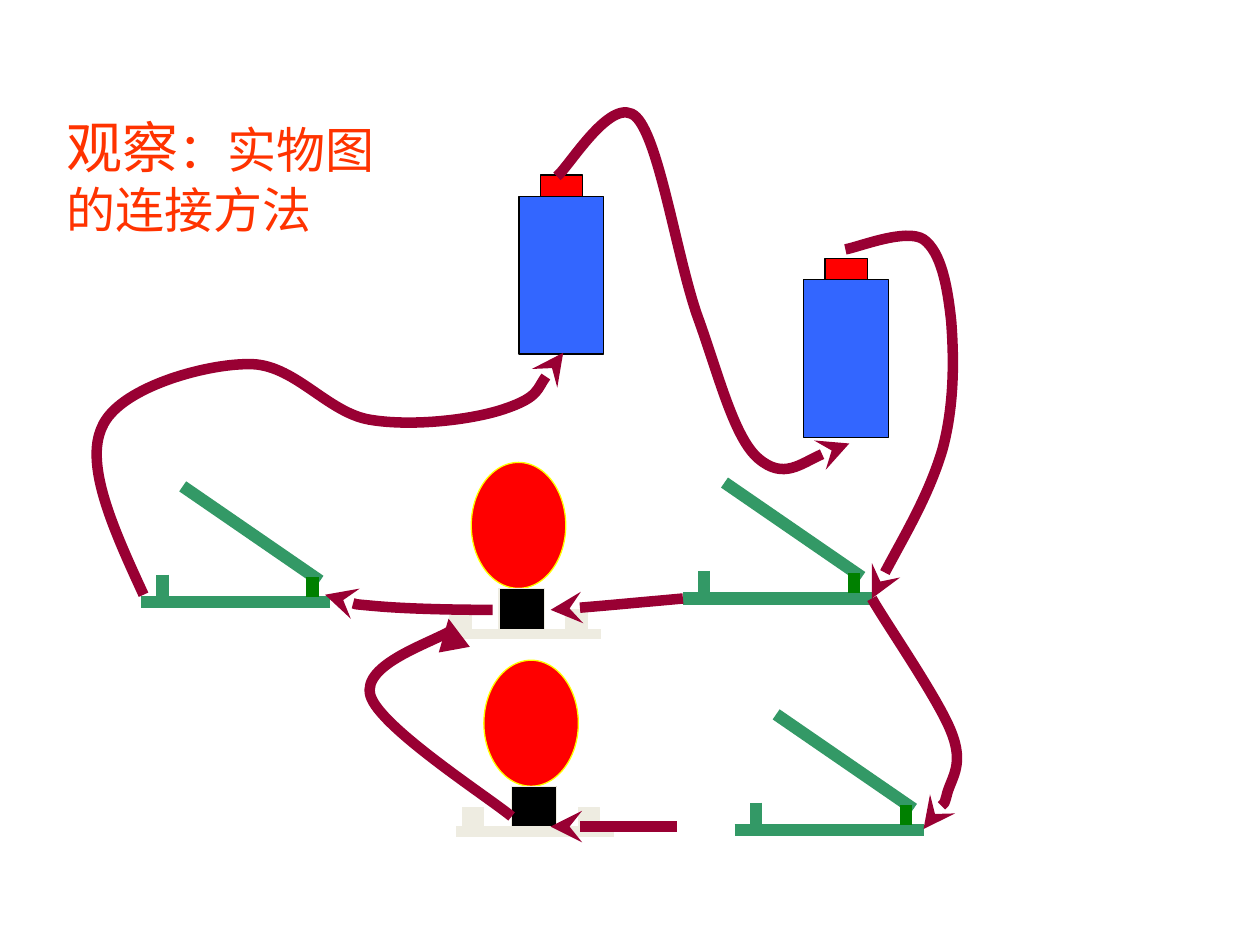
from collections import namedtuple
from dataclasses import dataclass

from lxml.etree import SubElement
from pptx import Presentation
from pptx.dml.color import RGBColor
from pptx.enum.shapes import MSO_CONNECTOR as Connector, MSO_SHAPE as Preset
from pptx.enum.text import MSO_ANCHOR as Anchor, MSO_AUTO_SIZE as AutoSize, PP_ALIGN as Align
from pptx.oxml.ns import qn
from pptx.util import Inches, Pt

Box = namedtuple("Box", "left top width height")


@dataclass(frozen=True)
class Theme:
    font: str = "Cabin"
    lead_size: float = 32
    title_size: float = 28
    title: str = "FF3300"
    battery: str = "3366FF"
    red: str = "FF0000"
    black: str = "000000"
    glow: str = "FFFF00"
    holder: str = "EEECE1"
    switch: str = "339966"
    hinge: str = "008000"
    wire: str = "990033"
    outline_width: float = 0.75
    wire_width: float = 6
    switch_width: float = 7


THEME = Theme()


def set_line(shape, color, width):
    shape.line.color.rgb = RGBColor.from_string(color)
    shape.line.width = Pt(width)


def add_arrowhead(shape, kind):
    SubElement(shape.line._get_or_add_ln(), qn("a:tailEnd"), type=kind)


def add_part(group, preset, box, part, fill, outline):
    left, top, width, height = part
    shape = group.shapes.add_shape(
        preset, Inches(box.left + left), Inches(box.top + top), Inches(width), Inches(height))
    shape.shadow.inherit = False
    shape.fill.solid()
    shape.fill.fore_color.rgb = RGBColor.from_string(fill)
    set_line(shape, outline, THEME.outline_width)


def add_bar(parent, box, start, end, color, width):
    bar = parent.shapes.add_connector(
        Connector.STRAIGHT,
        Inches(box.left + start[0]), Inches(box.top + start[1]),
        Inches(box.left + end[0]), Inches(box.top + end[1]))
    set_line(bar, color, width)
    SubElement(bar._element.spPr, qn("a:effectLst"))
    return bar


def add_title(slide, box):
    title = slide.shapes.title
    title.left, title.top, title.width, title.height = map(Inches, box)
    frame = title.text_frame
    frame.word_wrap = True
    frame.auto_size = AutoSize.SHAPE_TO_FIT_TEXT
    frame.vertical_anchor = Anchor.TOP
    paragraph = frame.paragraphs[0]
    paragraph.alignment = Align.LEFT
    for text, size in (("观察", THEME.lead_size), ("：实物图的连接方法", THEME.title_size)):
        run = paragraph.add_run()
        run.text = text
        run.font.name = THEME.font
        run.font.size = Pt(size)
        run.font.color.rgb = RGBColor.from_string(THEME.title)


def add_battery(slide, box):
    group = slide.shapes.add_group_shape()
    cap = 0.17
    add_part(group, Preset.RECTANGLE, box, (0, cap, box.width, box.height - cap),
             THEME.battery, THEME.black)
    add_part(group, Preset.RECTANGLE, box, (box.width / 4, 0, box.width / 2, cap),
             THEME.red, THEME.black)


def add_bulb(slide, box):
    group = slide.shapes.add_group_shape()
    add_part(group, Preset.OVAL, box, (0.22, 0, 0.75, 1), THEME.red, THEME.glow)
    add_part(group, Preset.RECTANGLE, box, (0.44, 1, 0.36, 0.36), THEME.black, THEME.holder)
    add_bar(group, box, (0, box.height), (box.width, box.height),
            THEME.holder, THEME.wire_width)
    for left in (0.05, 0.97):
        add_part(group, Preset.RECTANGLE, box, (left, 1.17, 0.17, 0.17),
                 THEME.holder, THEME.holder)


def add_switch(slide, box):
    group = slide.shapes.add_group_shape()
    bars = (
        ((0, box.height), (box.width, box.height), THEME.switch),
        ((0.33, 0), (1.42, 0.75), THEME.switch),
        ((0.17, 0.7), (0.17, 0.87), THEME.switch),
        ((1.36, 0.72), (1.36, 0.88), THEME.hinge),
    )
    for start, end, color in bars:
        add_bar(group, box, start, end, color, THEME.switch_width)


def add_curve(slide, box, points, arrowhead):
    placed = [(Inches(box.left + x), Inches(box.top + y)) for x, y in points]
    builder = slide.shapes.build_freeform(*placed[0])
    builder.add_line_segments(placed[1:], close=False)
    curve = builder.convert_to_shape()
    outline = next(curve._element.iter(qn("a:path")))
    segments = outline.findall(qn("a:lnTo"))
    for first in range(0, len(segments), 3):
        bezier = SubElement(outline, qn("a:cubicBezTo"))
        for segment in segments[first:first + 3]:
            bezier.append(segment[0])
            outline.remove(segment)
    curve.shadow.inherit = False
    curve.fill.background()
    set_line(curve, THEME.wire, THEME.wire_width)
    add_arrowhead(curve, arrowhead)


def add_wiring(slide, box):
    curves = (
        ([(4.42, 1.4), (4.52, 1.32), (4.86, 0.74), (5.05, 0.93),
          (5.24, 1.12), (5.38, 2.1), (5.55, 2.55), (5.71, 3), (5.83, 3.48),
          (6.02, 3.64), (6.22, 3.81), (6.59, 3.55), (6.74, 3.52)], "stealth"),
        ([(1.14, 4.72), (0.9, 4.2), (0.67, 3.69), (0.81, 3.39),
          (0.94, 3.08), (1.62, 2.89), (1.97, 2.89), (2.33, 2.88), (2.59, 3.27),
          (2.93, 3.33), (3.27, 3.39), (3.77, 3.33), (4.02, 3.24),
          (4.28, 3.15), (4.38, 2.89), (4.47, 2.8)], "stealth"),
        ([(3.91, 4.84), (3.55, 4.84), (3.2, 4.83), (2.98, 4.81),
          (2.75, 4.79), (2.67, 4.76), (2.58, 4.72)], "stealth"),
        ([(5.42, 4.75), (4.98, 4.79), (4.55, 4.83), (4.37, 4.84)], "stealth"),
        ([(6.92, 4.75), (7.02, 4.93), (7.45, 5.55), (7.55, 5.81),
          (7.65, 6.06), (7.56, 6.16), (7.52, 6.29),
          (7.49, 6.41), (7.37, 6.52), (7.33, 6.58)], "stealth"),
        ([(6.71, 1.98), (6.82, 1.96), (7.19, 1.81), (7.33, 1.9),
          (7.47, 2), (7.52, 2.27), (7.55, 2.55), (7.57, 2.82), (7.58, 3.2),
          (7.48, 3.57), (7.37, 3.94), (7.03, 4.51), (6.92, 4.75)], "stealth"),
        ([(4.06, 6.48), (3.88, 6.33), (3.01, 5.77), (2.94, 5.52),
          (2.87, 5.27), (3.53, 5.07), (3.63, 4.97),
          (3.74, 4.86), (3.58, 4.92), (3.56, 4.91)], "triangle"),
    )
    for points, arrowhead in curves:
        add_curve(slide, box, points, arrowhead)
    lead = add_bar(slide, box, (5.37, 6.56), (4.37, 6.56), THEME.wire, THEME.wire_width)
    add_arrowhead(lead, "stealth")


def main():
    presentation = Presentation()
    presentation.slide_width, presentation.slide_height = Inches(10), Inches(7.5)
    slide = presentation.slides.add_slide(presentation.slide_layouts[5])
    add_title(slide, Box(0.43, 0.84, 2.76, 1.1))
    for left, top in ((4.12, 1.39), (6.38, 2.05)):
        add_battery(slide, Box(left, top, 0.67, 1.42))
    for left, top in ((3.52, 3.67), (3.62, 5.24)):
        add_bulb(slide, Box(left, top, 1.25, 1.36))
    for left, top in ((1.12, 3.86), (5.83, 5.67), (5.42, 3.83)):
        add_switch(slide, Box(left, top, 1.5, 0.92))
    add_wiring(slide, Box(0, 0, 10, 7.5))
    presentation.save("out.pptx")


if __name__ == "__main__":
    main()
